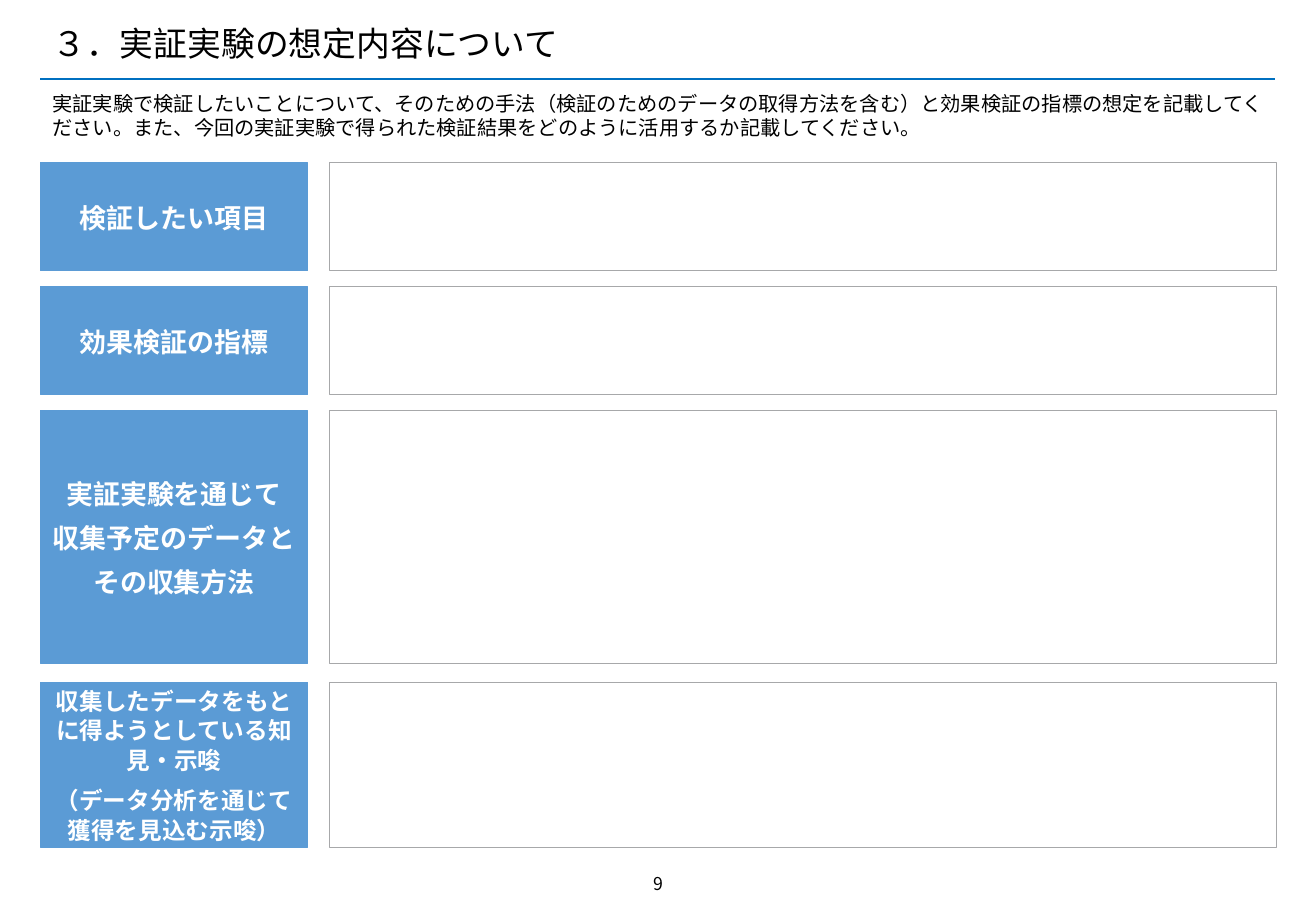
from lxml.etree import SubElement
from pptx import Presentation
from pptx.dml.color import RGBColor
from pptx.enum.shapes import MSO_CONNECTOR, MSO_SHAPE
from pptx.enum.text import MSO_ANCHOR, PP_ALIGN
from pptx.oxml.ns import qn
from pptx.util import Pt

BLACK = RGBColor(0x00, 0x00, 0x00)
WHITE = RGBColor(0xFF, 0xFF, 0xFF)
RULE_BLUE = RGBColor(0x00, 0x70, 0xC0)
LABEL_BLUE = RGBColor(0x5B, 0x9B, 0xD5)
FIELD_GRAY = RGBColor(0xA7, 0xA8, 0xAA)

LEFT, RIGHT = 24, 756.5
LABEL_WIDTH = 158.4
FIELD_LEFT = 195.1

ROWS = [
    (96.5, 64.1, 16, ["検証したい項目"]),
    (169.9, 64.1, 16, ["効果検証の指標"]),
    (243.4, 149.8, 16, ["実証実験を通じて", "収集予定のデータと", "その収集方法"]),
    (404.3, 97.9, 14, ["収集したデータをもとに得ようとしている知見・示唆",
                       "（データ分析を通じて獲得を見込む示唆）"]),
]


def set_values(target, values):
    for name, value in values.items():
        setattr(target, name, value)


class SlideBuilder:
    font_name = "Noto Sans CJK JP"
    line_height = 1.185

    def __init__(self, slide):
        self.slide = slide

    def fill_text(self, box, paragraphs, size, color=BLACK, bold=False,
                  align=PP_ALIGN.LEFT, leading=1, before=0, frame_format=None):
        frame = box.text_frame
        set_values(frame, {"word_wrap": True, **(frame_format or {})})
        for index, text in enumerate(paragraphs):
            para = frame.add_paragraph() if index else frame.paragraphs[0]
            set_values(para, {
                "alignment": align,
                "line_spacing": Pt(round(size * self.line_height * leading, 1)),
                "space_before": Pt(before),
            })
            span = para.add_run()
            span.text = text
            set_values(span.font, {"name": self.font_name, "size": Pt(size), "bold": bold})
            span.font.color.rgb = color
            east_asian = SubElement(span.font._element, qn("a:ea"))
            east_asian.set("typeface", self.font_name)

    def text(self, left, top, width, height, text, size, **style):
        box = self.slide.shapes.add_textbox(Pt(left), Pt(top), Pt(width), Pt(height))
        self.fill_text(box, [text], size, **style)

    def rectangle(self, left, top, width, height, fill, line):
        box = self.slide.shapes.add_shape(
            MSO_SHAPE.RECTANGLE, Pt(left), Pt(top), Pt(width), Pt(height))
        box.shadow.inherit = False
        box.fill.solid()
        box.fill.fore_color.rgb = fill
        box.line.color.rgb = line
        box.line.width = Pt(0.5)
        return box

    def label(self, top, height, size, paragraphs):
        box = self.rectangle(LEFT, top, LABEL_WIDTH, height, LABEL_BLUE, LABEL_BLUE)
        margins = {f"margin_{side}": Pt(5.76) for side in ("left", "top", "right", "bottom")}
        self.fill_text(box, paragraphs, size, color=WHITE, bold=True,
                       align=PP_ALIGN.CENTER, leading=1.06, before=6,
                       frame_format={"vertical_anchor": MSO_ANCHOR.MIDDLE, **margins})

    def field(self, top, height):
        self.rectangle(FIELD_LEFT, top, RIGHT - FIELD_LEFT, height, WHITE, FIELD_GRAY)

    def rule(self, left, right, top):
        connector = self.slide.shapes.add_connector(
            MSO_CONNECTOR.STRAIGHT, Pt(left), Pt(top), Pt(right), Pt(top))
        connector.line.color.rgb = RULE_BLUE
        connector.line.width = Pt(1)
        SubElement(connector._element.spPr, qn("a:effectLst"))


def main():
    deck = Presentation()
    deck.slide_width, deck.slide_height = Pt(780), Pt(540)
    page = SlideBuilder(deck.slides.add_slide(deck.slide_layouts[6]))

    page.rule(LEFT, 756, 46.8)
    page.text(359.3, 514.1, 61.9, 20.9, "9", 10.5, align=PP_ALIGN.CENTER)
    page.text(LEFT, 10.8, 672.5, 30.2, "３．実証実験の想定内容について", 20,
              frame_format={"vertical_anchor": MSO_ANCHOR.MIDDLE})
    page.text(LEFT, 50.8, 733, 36,
              "実証実験で検証したいことについて、そのための手法（検証のためのデータの取得方法を含む）"
              "と効果検証の指標の想定を記載してください。"
              "また、今回の実証実験で得られた検証結果をどのように活用するか記載してください。", 12)
    for top, height, size, paragraphs in ROWS:
        page.label(top, height, size, paragraphs)
        page.field(top, height)

    deck.save("out.pptx")


if __name__ == "__main__":
    main()
